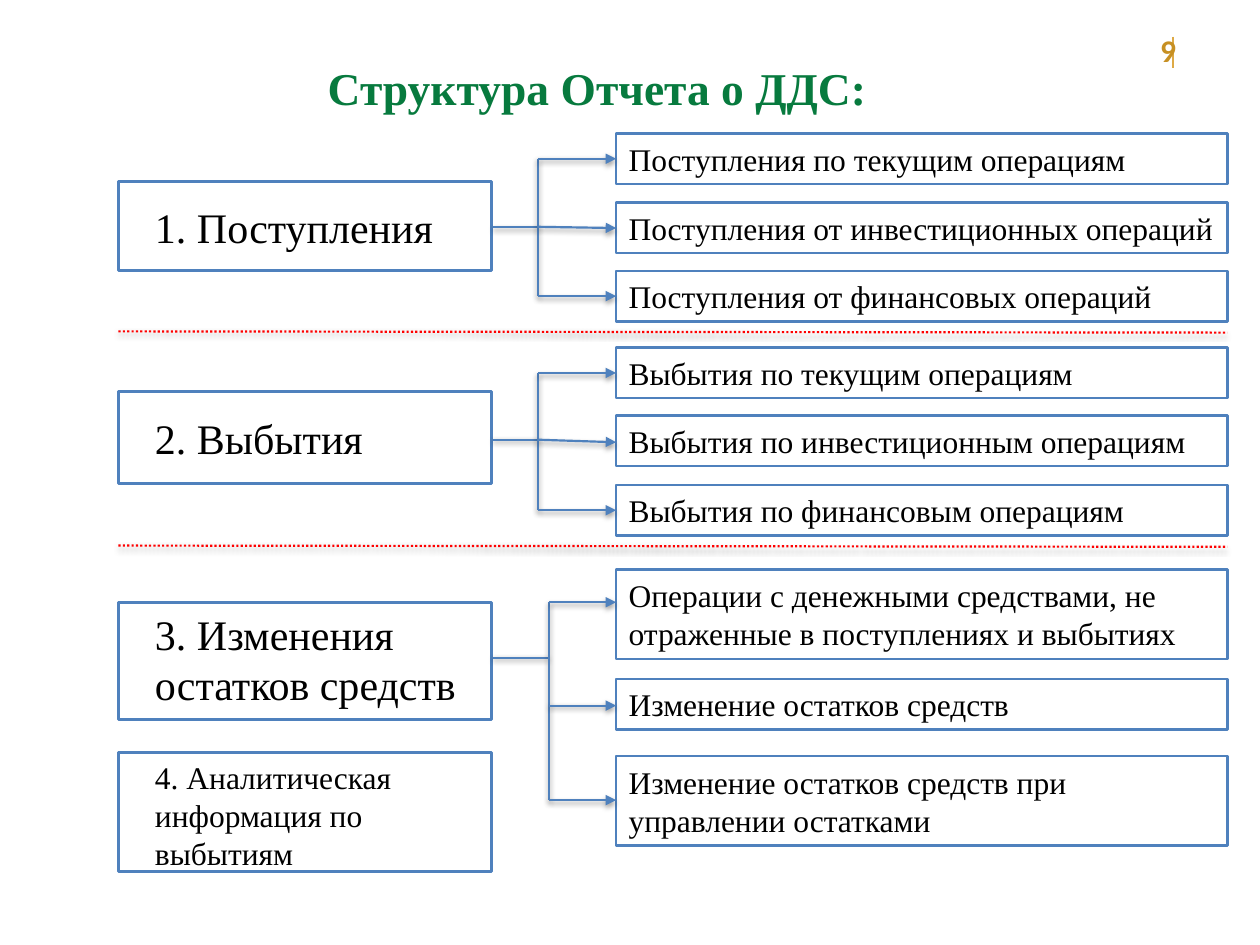
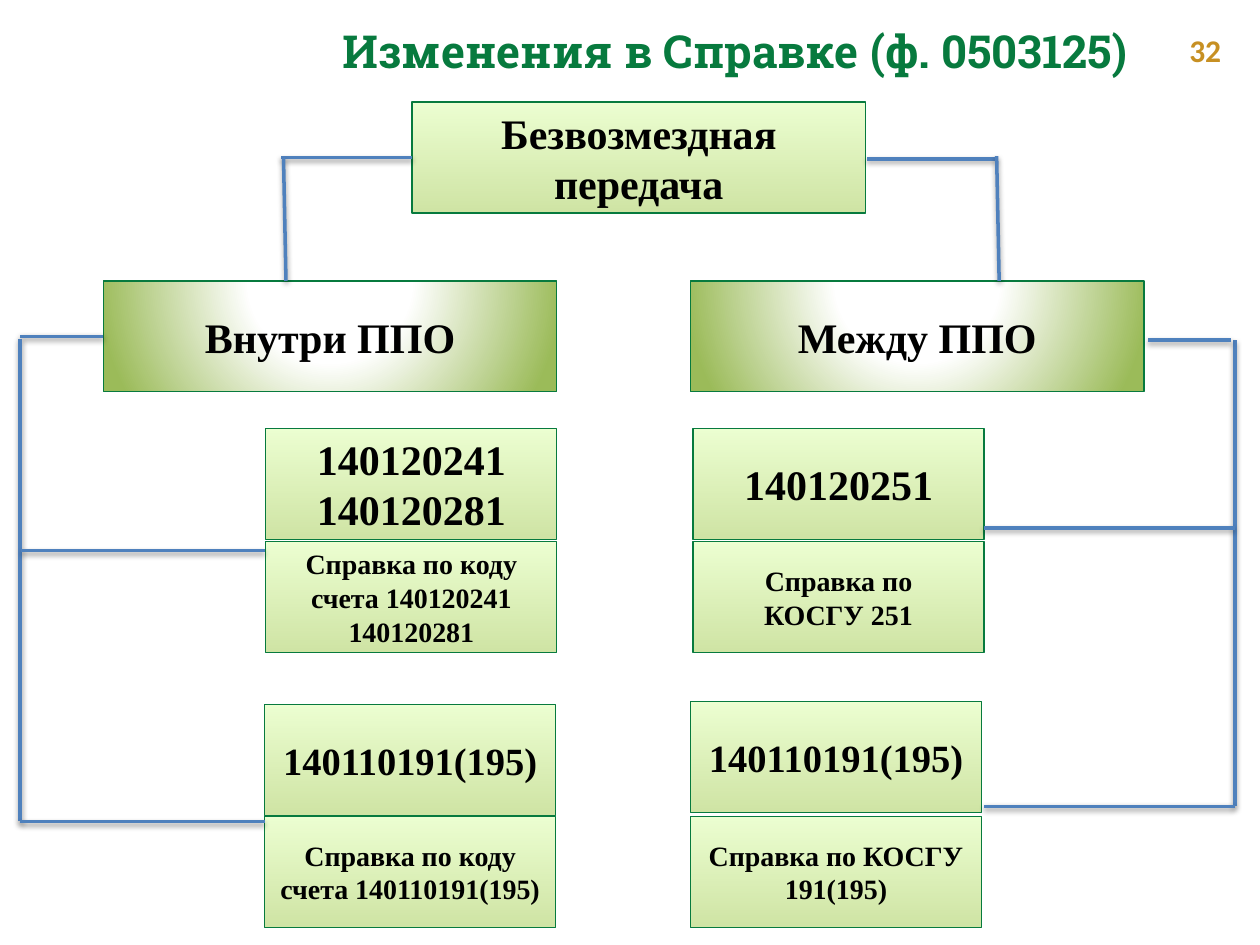
from lxml.etree import SubElement
from pptx import Presentation
from pptx.dml.color import RGBColor
from pptx.enum.dml import MSO_LINE
from pptx.enum.shapes import MSO_CONNECTOR, MSO_SHAPE
from pptx.enum.text import MSO_ANCHOR, MSO_AUTO_SIZE, PP_ALIGN
from pptx.oxml.ns import qn
from pptx.util import Emu, Pt

PX = 9144  # 100 px to the inch
TITLE_ONLY = 5

GREEN = "077A3E"
BLUE = "4F81BD"
RED = "FF0000"
GOLD = "C79023"
YELLOW = "DEAA46"
BLACK = "000000"
SERIF = "Times New Roman"

# Gradient stops: position %, colour, opacity %
LEAF_STOPS = [(0, "A0CA4A", 50), (100, "DAFFA5", 50)]
GLOW_STOPS = [(0, "FFFFFF", 100), (35, "FFFFFF", 100), (100, "9BBB59", 100)]


def px(length):
    return Emu(length * PX)


def rgb(color):
    return RGBColor.from_string(color)


def add_element(parent, tag, **attributes):
    return SubElement(parent, qn(tag), {k: str(v) for k, v in attributes.items()})


def add_color(parent, color, opacity):
    element = add_element(parent, "a:srgbClr", val=color)
    if opacity < 100:
        add_element(element, "a:alpha", val=opacity * 1000)


def set_gradient(shape, stops, radial):
    """Replace the fill by a vertical or a radial gradient."""
    shape.fill.gradient()
    gradient = shape._element.spPr.find(qn("a:gradFill"))
    for child in list(gradient):
        gradient.remove(child)
    stop_list = add_element(gradient, "a:gsLst")
    for position, color, opacity in stops:
        add_color(add_element(stop_list, "a:gs", pos=position * 1000), color, opacity)
    if radial:
        circle = add_element(gradient, "a:path", path="circle")
        add_element(circle, "a:fillToRect", l=50000, t=-80000, r=50000, b=180000)
    else:
        add_element(gradient, "a:lin", ang=270 * 60000, scaled=1)


class Deck:
    def __init__(self):
        self.presentation = Presentation()
        self.presentation.slide_width = px(1000)
        self.presentation.slide_height = px(750)
        self.slide = None

    def new_slide(self):
        layout = self.presentation.slide_layouts[TITLE_ONLY]
        self.slide = self.presentation.slides.add_slide(layout)

    def set_text(self, shape, lines, size, color=BLACK, font=SERIF, bold=False,
                 align=PP_ALIGN.LEFT, anchor=MSO_ANCHOR.MIDDLE, left_margin=10):
        frame = shape.text_frame
        frame.word_wrap = True
        frame.auto_size = MSO_AUTO_SIZE.NONE
        frame.vertical_anchor = anchor
        frame.margin_left, frame.margin_right = px(left_margin), px(10)
        frame.margin_top = frame.margin_bottom = px(5)
        for index, line in enumerate(lines):
            paragraph = frame.add_paragraph() if index else frame.paragraphs[0]
            paragraph.alignment = align
            run = paragraph.add_run()
            run.text = line
            run.font.size = Pt(size)
            run.font.name = font
            run.font.bold = bold
            run.font.color.rgb = rgb(color)

    def title(self, text, left, top, width, height, font=SERIF, left_margin=10):
        shape = self.slide.shapes.title
        shape.left, shape.top = px(left), px(top)
        shape.width, shape.height = px(width), px(height)
        self.set_text(shape, [text], 26, GREEN, font, True, PP_ALIGN.CENTER,
                      left_margin=left_margin)

    def page_number(self, text, left, width):
        shape = self.slide.shapes.add_textbox(px(left), px(20), px(width), px(40))
        self.set_text(shape, [text], 18, GOLD, "Calibri", True, anchor=MSO_ANCHOR.TOP)

    def rectangle(self, left, top, width, height, line_color, line_width):
        shape = self.slide.shapes.add_shape(
            MSO_SHAPE.RECTANGLE, px(left), px(top), px(width), px(height))
        shape.shadow.inherit = False
        shape.fill.background()
        shape.line.color.rgb = rgb(line_color)
        shape.line.width = Pt(line_width)
        return shape

    def outlined_box(self, text, left, top, width, height, size=18, line_width=1.5, **style):
        shape = self.rectangle(left, top, width, height, BLUE, line_width)
        self.set_text(shape, [text], size, **style)

    def gradient_box(self, lines, left, top, width, size, stops=LEAF_STOPS, radial=False):
        shape = self.rectangle(left, top, width, 88, GREEN, 0.75)
        set_gradient(shape, stops, radial)
        self.set_text(shape, lines, size, bold=True, align=PP_ALIGN.CENTER)

    def line(self, x1, y1, x2, y2, color=BLUE, width=1.25, arrow=False,
             dotted=False, shadow=True):
        connector = self.slide.shapes.add_connector(
            MSO_CONNECTOR.STRAIGHT, px(x1), px(y1), px(x2), px(y2))
        connector.line.color.rgb = rgb(color)
        connector.line.width = Pt(width)
        if dotted:
            connector.line.dash_style = MSO_LINE.ROUND_DOT
        properties = connector._element.spPr
        if arrow:
            add_element(properties.find(qn("a:ln")), "a:tailEnd", type="triangle")
        effects = add_element(properties, "a:effectLst")
        if shadow:
            outer = add_element(effects, "a:outerShdw", blurRad=Pt(3.1), dist=Pt(1.6),
                                dir=90 * 60000, rotWithShape=0)
            add_color(outer, BLACK, 38)


def report_structure(deck):
    label_left, label_width = 94, 296
    item_left, item_width = 489, 485
    label_right = label_left + label_width + 1
    top_anchor, middle = MSO_ANCHOR.TOP, MSO_ANCHOR.MIDDLE

    labels = [  # text, top, height, size, anchor
        ("1. Поступления", 144, 71, 24, middle),
        ("2. Выбытия", 311, 73, 24, middle),
        ("3. Изменения остатков средств", 478, 93, 24, top_anchor),
        ("4. Аналитическая информация по выбытиям", 597, 95, 18, top_anchor),
    ]
    branches = [  # spine x, stem y, items as (text, top, height, arrow y)
        (427, 180, [("Поступления по текущим операциям", 106, 40, 126),
                    ("Поступления от инвестиционных операций", 161, 40, 181),
                    ("Поступления от финансовых операций", 215, 40, 235)]),
        (427, 349, [("Выбытия по текущим операциям", 276, 40, 296),
                    ("Выбытия по инвестиционным операциям", 330, 40, 351),
                    ("Выбытия по финансовым операциям", 385, 40, 405)]),
        (436, 522, [("Операции с денежными средствами, не отраженные в поступлениях "
                     "и выбытиях", 452, 71, 478),
                    ("Изменение остатков средств", 539, 40, 560),
                    ("Изменение остатков средств при управлении остатками", 600, 71, 635)]),
    ]

    deck.new_slide()
    deck.line(931, 29, 931, 54, YELLOW, 1, shadow=False)
    deck.page_number("9", 911, 63)
    deck.title("Структура Отчета о ДДС:", 27, 41, 894, 57)
    for text, top, height, size, anchor in labels:
        deck.outlined_box(text, label_left, top, label_width, height, size, 1.75,
                          anchor=anchor, left_margin=29)
    for spine, stem, items in branches:
        deck.line(label_right, stem, spine, stem)
        deck.line(spine, items[0][-1], spine, items[-1][-1])
        for text, top, height, arrow_y in items:
            deck.outlined_box(text, item_left, top, item_width, height)
            start_y = stem if abs(arrow_y - stem) < 5 else arrow_y
            deck.line(spine, start_y, item_left, arrow_y, arrow=True)
    for y in (263, 433):
        deck.line(label_left, y, item_left + item_width, y + 1, RED, dotted=True)


def reference_changes(deck):
    wide, narrow = 360, 231
    account_boxes = [  # lines, left, top, size
        (["140120241", "140120281"], 211, 340, 24),
        (["Справка по коду счета 140120241", "140120281"], 211, 430, 16),
        (["140110191(195)"], 210, 559, 22),
        (["Справка по коду счета 140110191(195)"], 210, 648, 16),
        (["140120251"], 550, 340, 24),
        (["Справка по", "КОСГУ 251"], 550, 430, 16),
        (["140110191(195)"], 548, 557, 22),
        (["Справка по КОСГУ 191(195)"], 548, 648, 16),
    ]
    links = [  # x1, y1, x2, y2
        (327, 125, 223, 125), (225, 125, 227, 223),
        (791, 126, 688, 126), (791, 124, 793, 223),
        (82, 267, 16, 267), (16, 269, 16, 652),
        (16, 652, 210, 652), (17, 437, 210, 437),
        (980, 270, 980, 640), (977, 270, 911, 270),
        (781, 640, 980, 640), (781, 419, 980, 419),
    ]

    deck.new_slide()
    deck.page_number("32", 934, 49)
    deck.title("Изменения в Справке (ф. 0503125)", 175, 13, 768, 54, "Roboto Slab", 60)
    deck.gradient_box(["Безвозмездная передача"], 327, 81, wide, 24)
    for text, left in (("Внутри ППО", 82), ("Между ППО", 548)):
        deck.gradient_box([text], left, 223, wide, 24, GLOW_STOPS, radial=True)
    for lines, left, top, size in account_boxes:
        deck.gradient_box(lines, left, top, narrow, size)
    for link in links:
        deck.line(*link, width=2)


def main():
    deck = Deck()
    report_structure(deck)
    reference_changes(deck)
    deck.presentation.save("out.pptx")


if __name__ == "__main__":
    main()
